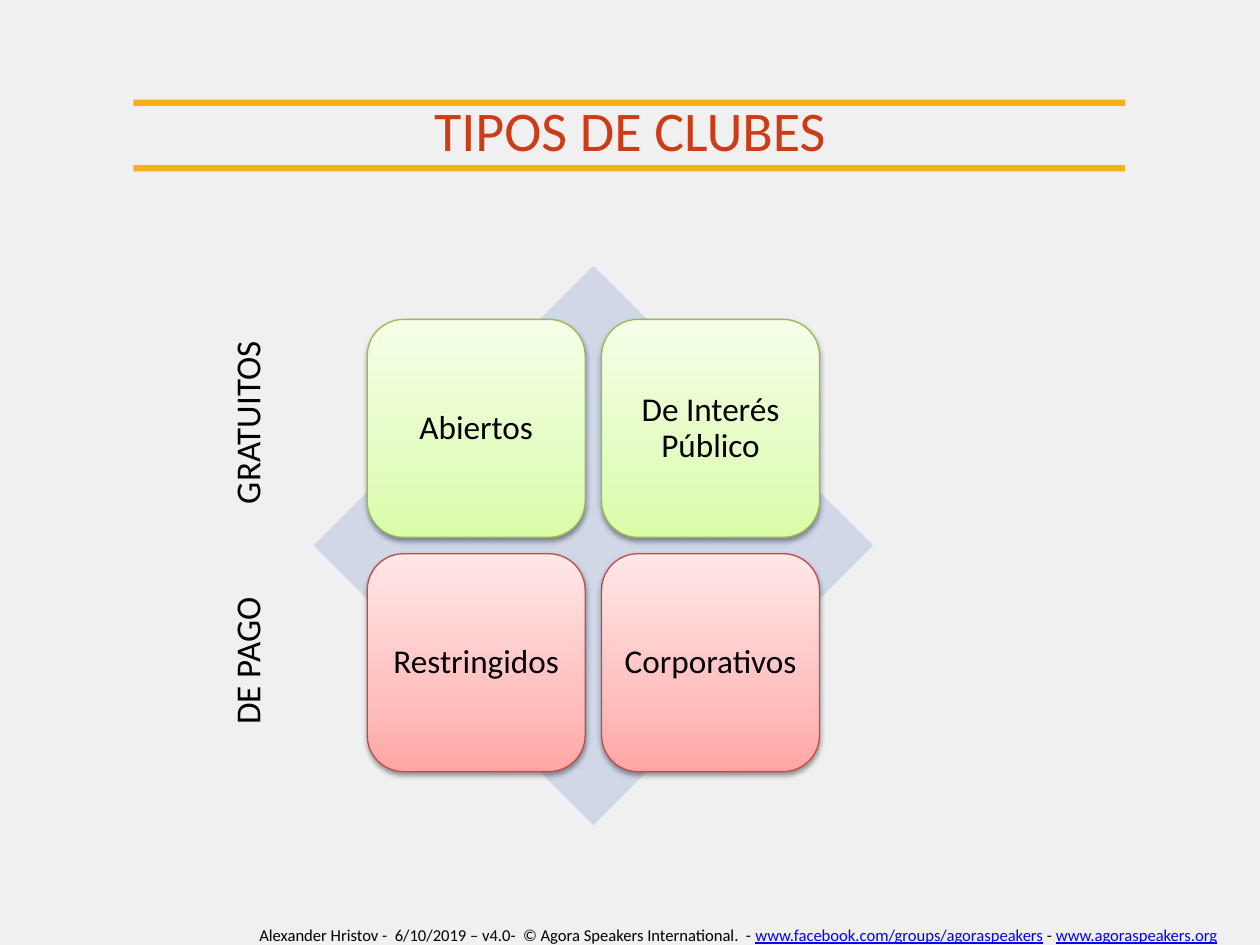
from dataclasses import dataclass

from lxml import etree
from pptx import Presentation
from pptx.dml.color import RGBColor
from pptx.enum.shapes import MSO_SHAPE
from pptx.enum.text import MSO_ANCHOR, PP_ALIGN
from pptx.oxml.ns import qn
from pptx.util import Inches, Pt

RECTANGLE = MSO_SHAPE.RECTANGLE
DIAMOND = MSO_SHAPE.DIAMOND
ROUNDED = MSO_SHAPE.ROUNDED_RECTANGLE
CENTER = PP_ALIGN.CENTER
TOP, MIDDLE = MSO_ANCHOR.TOP, MSO_ANCHOR.MIDDLE


@dataclass(frozen=True)
class Theme:
    font: str = "Calibri"
    background: str = "F0F0F0"
    rule: str = "F8AF18"
    title: str = "CE3C17"
    text: str = "000000"
    link: str = "0000FF"
    diamond: str = "D0D8E8"
    free_stops: tuple = ((0, "DAFDA7"), (35, "E4FCC2"), (100, "F5FFE7"))
    free_line: str = "98B955"
    paid_stops: tuple = ((0, "FFA6A5"), (35, "FFC0BF"), (100, "FFE7E7"))
    paid_line: str = "BF4C48"
    title_size: float = 32
    label_size: float = 20
    card_size: float = 19
    footer_size: float = 9.5


THEME = Theme()


def rgb(color):
    return RGBColor.from_string(color)


def add_run(paragraph, text, size, color=THEME.text, underline=False):
    run = paragraph.add_run()
    run.text = text
    run.font.name = THEME.font
    run.font.size = Pt(size)
    run.font.color.rgb = rgb(color)
    run.font.underline = underline


def add_text(slide, left, top, width, height, runs, size, rotation=0):
    """Centred text box; runs are (text, color, underline)."""
    box = slide.shapes.add_textbox(
        Inches(left), Inches(top), Inches(width), Inches(height))
    box.rotation = rotation
    frame = box.text_frame
    frame.word_wrap = True
    frame.vertical_anchor = TOP
    paragraph = frame.paragraphs[0]
    paragraph.alignment = CENTER
    for text, color, underline in runs:
        add_run(paragraph, text, size, color, underline)


def add_plain_shape(slide, kind, left, top, width, height, color):
    shape = slide.shapes.add_shape(
        kind, Inches(left), Inches(top), Inches(width), Inches(height))
    shape.shadow.inherit = False
    shape.fill.solid()
    shape.fill.fore_color.rgb = rgb(color)
    shape.line.fill.background()
    return shape


def add_color(parent, color):
    return etree.SubElement(parent, qn("a:srgbClr"), val=color)


def set_upward_gradient(shape, stops):
    shape.fill.gradient()
    shape.fill.gradient_angle = 90
    stop_list = shape._element.spPr.find(qn("a:gradFill")).find(qn("a:gsLst"))
    for old_stop in list(stop_list):
        stop_list.remove(old_stop)
    for percent, color in stops:
        stop = etree.SubElement(stop_list, qn("a:gs"), pos=str(percent * 1000))
        add_color(stop, color)


def set_drop_shadow(shape):
    effects = shape._element.spPr.find(qn("a:effectLst"))
    shadow = etree.SubElement(
        effects, qn("a:outerShdw"), blurRad=str(Pt(3.1)), dist=str(Pt(1.6)),
        dir="5400000", rotWithShape="0")
    etree.SubElement(add_color(shadow, "000000"), qn("a:alpha"), val="38000")


def add_card(slide, left, top, side, name, stops, outline):
    card = add_plain_shape(slide, ROUNDED, left, top, side, side, stops[0][1])
    set_upward_gradient(card, stops)
    set_drop_shadow(card)
    card.line.color.rgb = rgb(outline)
    card.line.width = Pt(0.75)
    frame = card.text_frame
    frame.word_wrap = True
    frame.vertical_anchor = MIDDLE
    frame.margin_left = frame.margin_right = Inches(0.07)
    paragraph = frame.paragraphs[0]
    paragraph.alignment = CENTER
    paragraph.line_spacing = 0.9
    add_run(paragraph, name, THEME.card_size)


def add_header(slide):
    for top in (0.79, 1.31):
        add_plain_shape(slide, RECTANGLE, 1.06, top, 7.87, 0.05, THEME.rule)
    add_text(slide, 0, 0.71, 10, 0.6,
             [("TIPOS DE CLUBES", THEME.title, False)], THEME.title_size)


def add_club_matrix(slide):
    center_x, center_y = 4.71, 4.33
    diamond, side, gap = 4.44, 1.73, 0.13
    add_plain_shape(slide, DIAMOND, center_x - diamond / 2,
                    center_y - diamond / 2, diamond, diamond, THEME.diamond)

    # Each row: label, label top, club types, colours
    club_rows = (
        ("GRATUITOS", 3.14, ("Abiertos", "De Interés Público"),
         THEME.free_stops, THEME.free_line),
        ("DE PAGO", 5.03, ("Restringidos", "Corporativos"),
         THEME.paid_stops, THEME.paid_line),
    )
    first_left = center_x - gap / 2 - side
    first_top = center_y - gap / 2 - side
    for row, (label, label_top, clubs, stops, outline) in enumerate(club_rows):
        for column, club in enumerate(clubs):
            add_card(slide, first_left + column * (side + gap),
                     first_top + row * (side + gap), side, club, stops, outline)
        add_text(slide, 1.17, label_top, 1.57, 0.43,
                 [(label, THEME.text, False)], THEME.label_size, rotation=270)


def add_footer(slide):
    credit = ("Alexander Hristov -  6/10/2019 – v4.0-  "
              "© Agora Speakers International.  - ")
    add_text(slide, 1.72, 7.29, 8.28, 0.21, [
        (credit, THEME.text, False),
        ("www.facebook.com/groups/agoraspeakers", THEME.link, True),
        (" - ", THEME.text, False),
        ("www.agoraspeakers.org", THEME.link, True),
    ], THEME.footer_size)


def main():
    deck = Presentation()
    deck.slide_width, deck.slide_height = Inches(10), Inches(7.5)
    slide = deck.slides.add_slide(deck.slide_layouts[6])
    slide.background.fill.solid()
    slide.background.fill.fore_color.rgb = rgb(THEME.background)
    add_header(slide)
    add_club_matrix(slide)
    add_footer(slide)
    deck.save("out.pptx")


if __name__ == "__main__":
    main()
